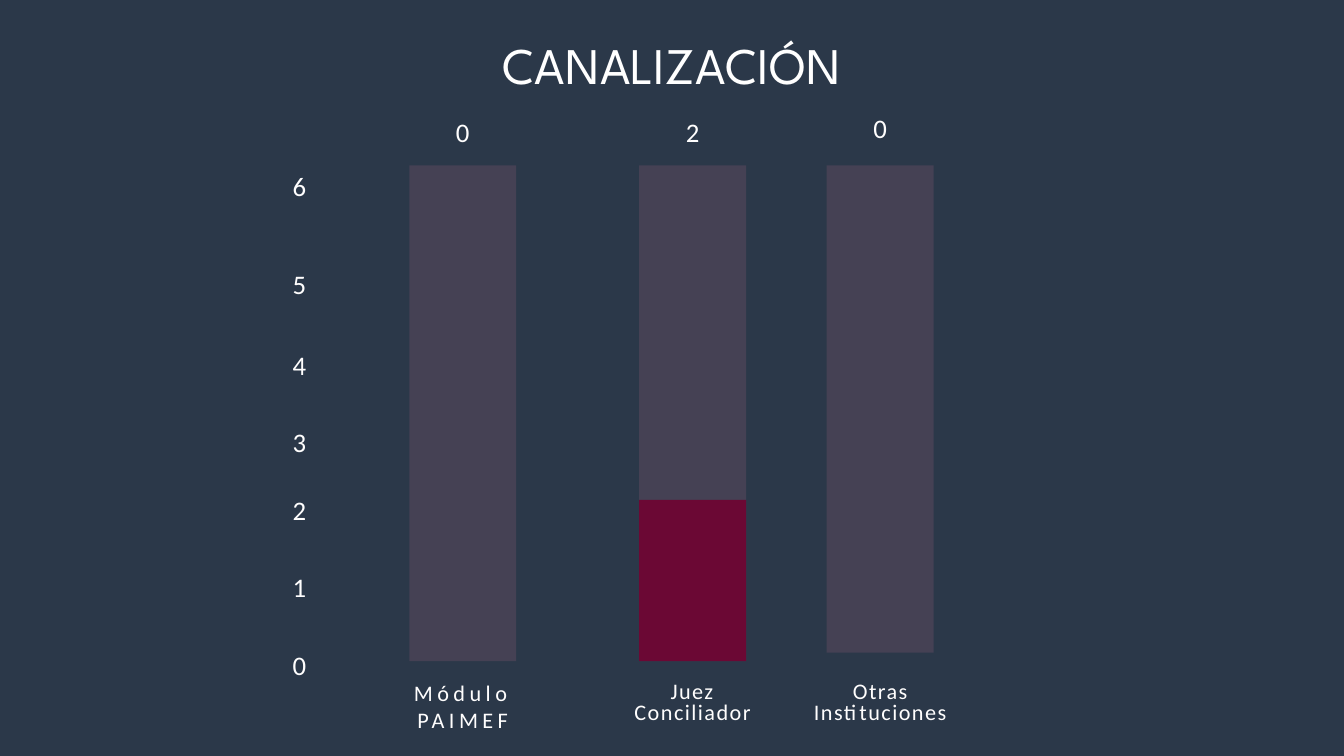
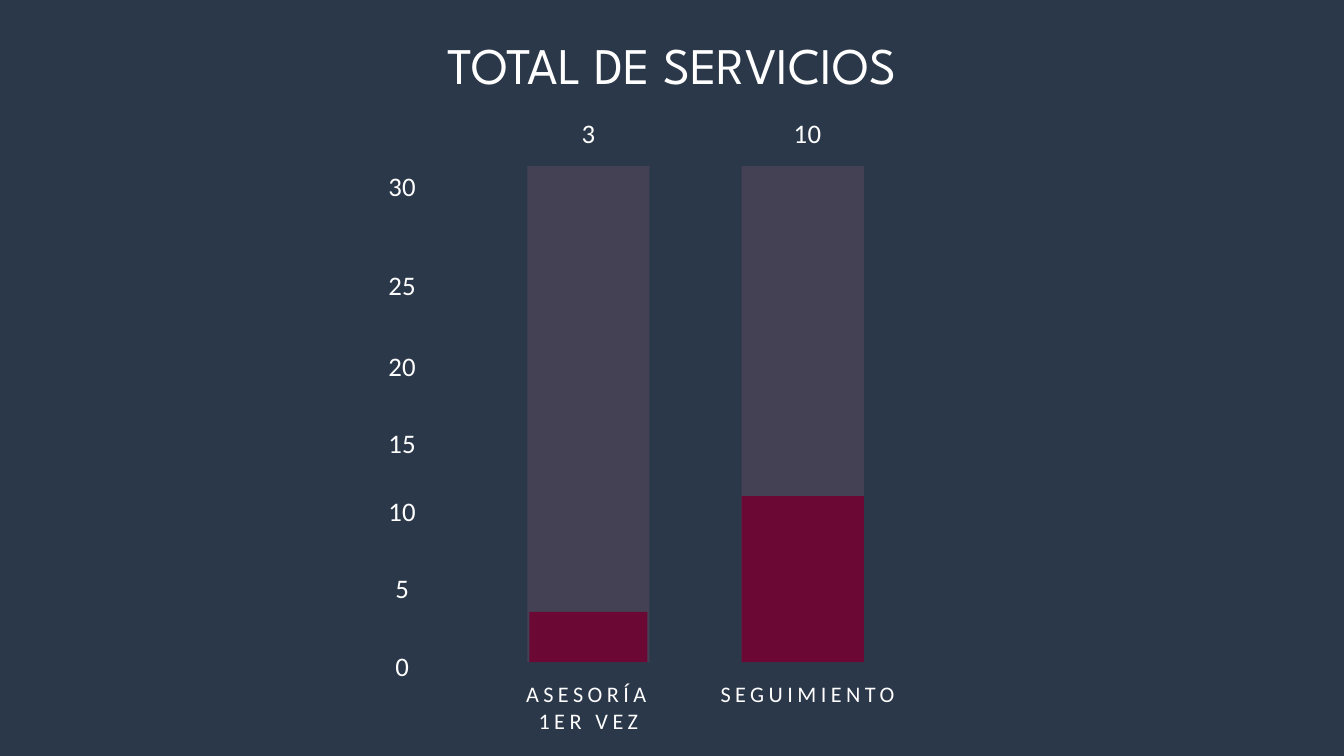
from dataclasses import dataclass

from lxml import etree
from pptx import Presentation
from pptx.dml.color import RGBColor
from pptx.enum.shapes import MSO_SHAPE as Shape
from pptx.enum.text import MSO_ANCHOR as Anchor
from pptx.enum.text import MSO_AUTO_SIZE as AutoSize
from pptx.enum.text import PP_ALIGN as Align
from pptx.oxml.ns import qn
from pptx.util import Cm, Pt


@dataclass(frozen=True)
class TextStyle:
    font: str
    size: float
    leading: float
    color: str
    tracking: float = 0


class Theme:
    background = "2B3849"
    track = "9C617B"
    track_opacity = 23
    level = "6B0834"
    title = TextStyle("League Spartan", 55, 77, "FFFFFF")
    number = TextStyle("Calibri", 28.7, 43.9, "FFFEFE", 0.3)
    wide_label = TextStyle("Calibri", 23.8, 29, "FFFEFE", 4.8)
    tight_label = TextStyle("Calibri", 23.8, 23.1, "FFFEFE", 1.6)


@dataclass(frozen=True)
class Box:
    """An area in centimetres."""
    left: float
    top: float
    width: float
    height: float


@dataclass(frozen=True)
class Bar:
    """One bar; center is measured from the left edge of the chart."""
    label: str
    value: str
    center: float
    label_width: float
    level: float = 0
    level_inset: float = 0
    height: float = 18.75
    style: TextStyle = Theme.wide_label
    text_shift: float = 0
    value_top: float = -2.22
    label_top: float = 19.43


TITLE_BOX = Box(6.32, 0.86, 38.15, 2.57)
# Tops of the scale numbers below the chart top, highest number first
TICK_TOPS = (-0.18, 3.53, 6.6, 9.52, 12.09, 15.01, 17.93)
TICK_HEIGHT = 1.4


def place(sp, box):
    sp.left, sp.top = Cm(box.left), Cm(box.top)
    sp.width, sp.height = Cm(box.width), Cm(box.height)


def write(sp, text, style):
    tf = sp.text_frame
    tf.word_wrap = True
    tf.auto_size = AutoSize.NONE
    tf.vertical_anchor = Anchor.TOP
    tf.margin_left = tf.margin_right = tf.margin_top = tf.margin_bottom = 0
    for i, line in enumerate(text.split("\n")):
        p = tf.add_paragraph() if i else tf.paragraphs[0]
        p.alignment = Align.CENTER
        p.line_spacing = Pt(style.leading)
        r = p.add_run()
        r.text = line
        r.font.name = style.font
        r.font.size = Pt(style.size)
        r.font.color.rgb = RGBColor.from_string(style.color)
        if style.tracking:
            r.font._element.set("spc", str(round(style.tracking * 100)))


def add_text(slide, box, text, style):
    sp = slide.shapes.add_textbox(0, 0, 0, 0)
    place(sp, box)
    write(sp, text, style)


def add_block(slide, box, color, opacity=100):
    sp = slide.shapes.add_shape(Shape.RECTANGLE, 0, 0, 0, 0)
    place(sp, box)
    sp.shadow.inherit = False
    sp.fill.solid()
    sp.fill.fore_color.rgb = RGBColor.from_string(color)
    sp.line.fill.background()
    if opacity < 100:
        clr = sp.fill._xPr.find(".//" + qn("a:srgbClr"))
        etree.SubElement(clr, qn("a:alpha")).set("val", str(opacity * 1000))


def add_scale(slide, box, ticks):
    for tick, top in zip(ticks, TICK_TOPS):
        add_text(slide, Box(box.left, box.top + top, box.width, TICK_HEIGHT),
                 str(tick), Theme.number)


def add_bar(slide, box, bar, width, number_width):
    def centered(w, top, h, shift=0):
        return Box(box.left + bar.center + shift - w / 2, box.top + top, w, h)

    add_block(slide, centered(width, 0, bar.height),
              Theme.track, Theme.track_opacity)
    if bar.level:
        add_block(slide, centered(width - 2 * bar.level_inset,
                                  box.height - bar.level, bar.level), Theme.level)
    add_text(slide, centered(number_width, bar.value_top, TICK_HEIGHT, bar.text_shift),
             bar.value, Theme.number)
    add_text(slide, centered(bar.label_width, bar.label_top, 2, bar.text_shift),
             bar.label, bar.style)


def add_bar_slide(prs, title, box, ticks, number_width, bars, bar_width):
    slide = prs.slides.add_slide(prs.slide_layouts[5])
    place(slide.shapes.title, TITLE_BOX)
    write(slide.shapes.title, title, Theme.title)
    add_scale(slide, Box(box.left, box.top, number_width, box.height), ticks)
    for bar in bars:
        add_bar(slide, box, bar, bar_width, number_width)


def main():
    prs = Presentation()
    prs.slide_width, prs.slide_height = Cm(50.8), Cm(28.58)
    fill = prs.slide_master.background.fill
    fill.solid()
    fill.fore_color.rgb = RGBColor.from_string(Theme.background)

    add_bar_slide(
        prs, "CANALIZACIÓN", Box(10.24, 6.25, 26.4, 18.75),
        range(6, -1, -1), 2.16,
        [
            Bar("Módulo PAIMEF", "0", 7.25, 5.54),
            Bar("Juez Conciliador", "2", 15.94, 5.54, level=6.1,
                style=Theme.tight_label, label_top=19.53),
            Bar("Otras\nInstituciones", "0", 23.03, 6.71, height=18.42,
                style=Theme.tight_label, value_top=-2.36, label_top=19.53),
        ], 4.04)
    add_bar_slide(
        prs, "TOTAL DE SERVICIOS", Box(13.97, 6.28, 21.2, 18.75),
        range(30, -1, -5), 2.46,
        [
            Bar("ASESORÍA 1ER VEZ", "3", 8.27, 6.32, level=1.9, level_inset=0.08),
            Bar("SEGUIMIENTO", "10", 16.37, 9.32, level=6.27, text_shift=0.18),
        ], 4.62)
    prs.save("out.pptx")


if __name__ == "__main__":
    main()
